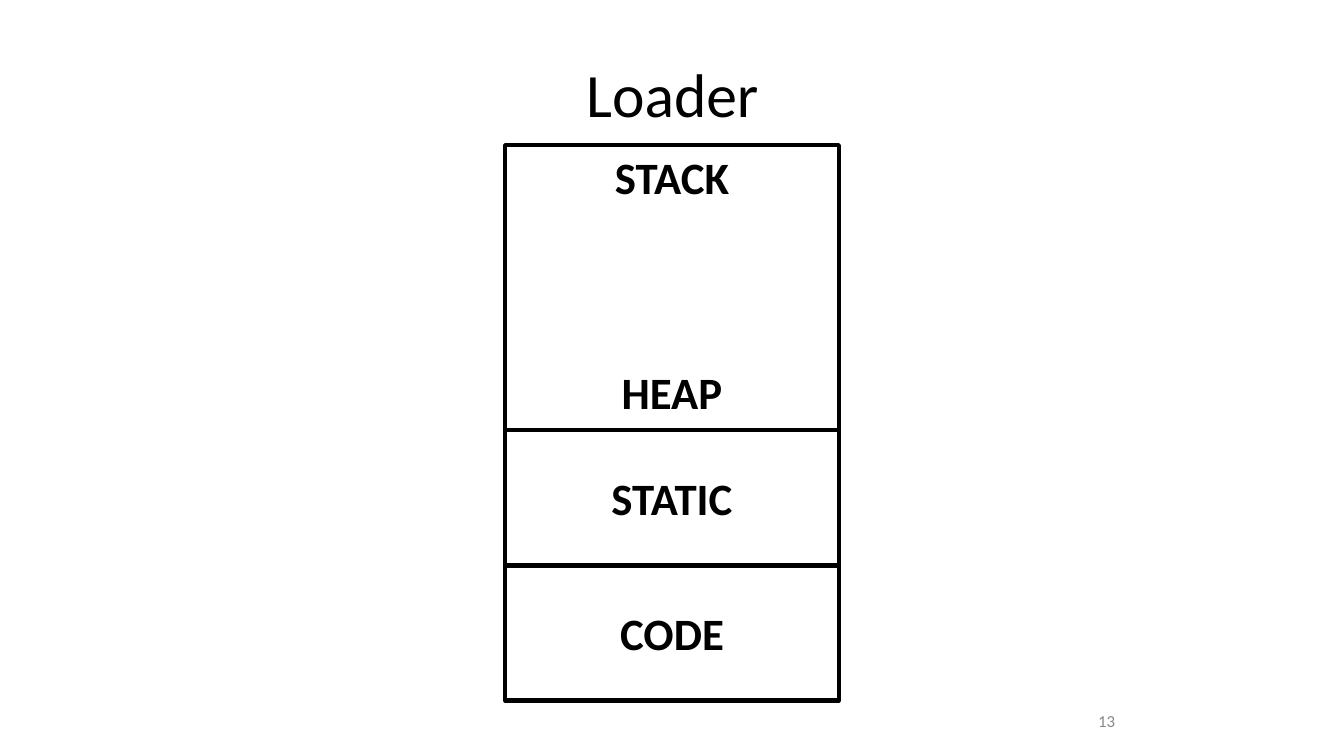
"""Build the Loader slide: a memory layout of stack, heap, static data and code."""
from pptx import Presentation
from pptx.dml.color import RGBColor
from pptx.enum.shapes import MSO_SHAPE as Shape
from pptx.enum.text import MSO_ANCHOR as Anchor, PP_ALIGN as Align
from pptx.util import Inches, Pt

BLACK = RGBColor(0x00, 0x00, 0x00)
WHITE = RGBColor(0xFF, 0xFF, 0xFF)
GRAY = RGBColor(0x88, 0x88, 0x88)

deck = Presentation()
deck.slide_width, deck.slide_height = Inches(13.33), Inches(7.5)
page = deck.slides.add_slide(deck.slide_layouts[6])


def write(box, lines, size, color=BLACK, bold=False, align=Align.CENTER,
          anchor=Anchor.MIDDLE, gap=0):
    frame = box.text_frame
    frame.word_wrap = True
    frame.vertical_anchor = anchor
    for index, line in enumerate(lines):
        para = frame.add_paragraph() if index else frame.paragraphs[0]
        para.alignment = align
        para.space_before = Pt(gap if index else 0)
        span = para.add_run()
        span.text = line
        span.font.name, span.font.size = "Calibri", Pt(size)
        span.font.bold, span.font.color.rgb = bold, color


title = page.shapes.add_textbox(Inches(2.17), Inches(0.3), Inches(9), Inches(1.25))
write(title, ["Loader"], 44)

number = page.shapes.add_textbox(Inches(8.83), Inches(6.95), Inches(2.33), Inches(0.4))
write(number, ["13"], 12, GRAY, align=Align.RIGHT)

memory_width = Inches(3.31)
memory_left = (deck.slide_width - memory_width) // 2
segment_bottom = Inches(6.95)
segments = [
    (["CODE"], 1.34, Anchor.MIDDLE),
    (["STATIC"], 1.34, Anchor.MIDDLE),
    (["STACK", "HEAP"], 2.83, Anchor.TOP),
]
for labels, height, anchor in segments:
    segment_bottom -= Inches(height)
    segment = page.shapes.add_shape(
        Shape.RECTANGLE, memory_left, segment_bottom, memory_width, Inches(height))
    segment.shadow.inherit = False
    segment.fill.solid()
    segment.fill.fore_color.rgb = WHITE
    segment.line.color.rgb = BLACK
    segment.line.width = Pt(3)
    write(segment, labels, 32, bold=True, anchor=anchor, gap=115)

deck.save("out.pptx")
